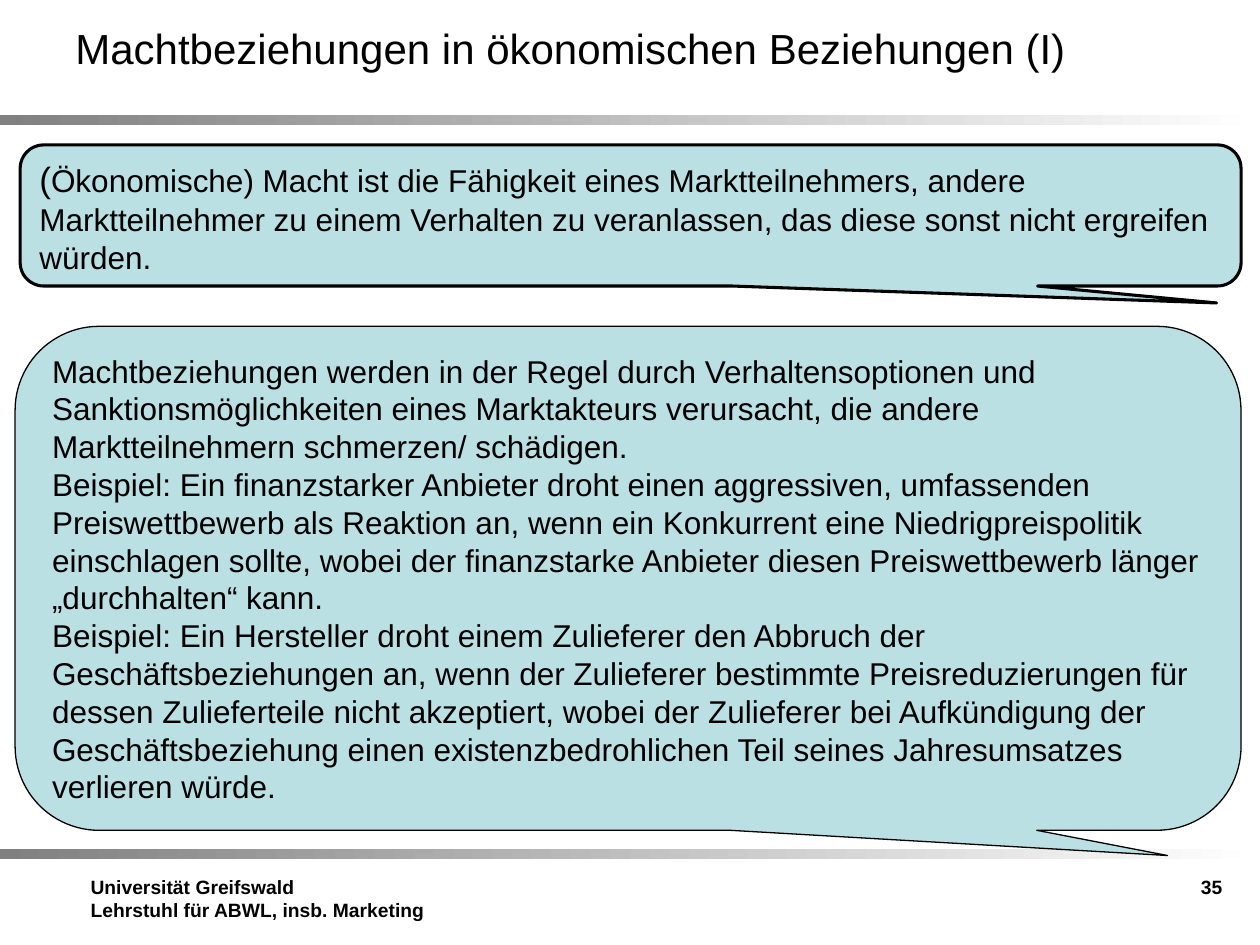
from pptx import Presentation
from pptx import util as u
from pptx.dml.color import RGBColor
from pptx.enum import shapes, text

BLACK = RGBColor(0x00, 0x00, 0x00)
GRAY = RGBColor(0x80, 0x80, 0x80)
WHITE = RGBColor(0xFF, 0xFF, 0xFF)
TEAL = RGBColor(0xBB, 0xE0, 0xE3)

TITLE = "Machtbeziehungen in ökonomischen Beziehungen (I)"
FOOTER = ["Universität Greifswald", "Lehrstuhl für ABWL, insb. Marketing"]
DEFINITION = (
    "Ökonomische) Macht ist die Fähigkeit eines Marktteilnehmers, andere "
    "Marktteilnehmer zu einem Verhalten zu veranlassen, das diese sonst "
    "nicht ergreifen würden."
)
EXAMPLES = [
    "Machtbeziehungen werden in der Regel durch Verhaltensoptionen und "
    "Sanktionsmöglichkeiten eines Marktakteurs verursacht, die andere "
    "Marktteilnehmern schmerzen/ schädigen.",
    "Beispiel: Ein finanzstarker Anbieter droht einen aggressiven, "
    "umfassenden Preiswettbewerb als Reaktion an, wenn ein Konkurrent eine "
    "Niedrigpreispolitik einschlagen sollte, wobei der finanzstarke Anbieter "
    "diesen Preiswettbewerb länger „durchhalten“ kann.",
    "Beispiel: Ein Hersteller droht einem Zulieferer den Abbruch der "
    "Geschäftsbeziehungen an, wenn der Zulieferer bestimmte "
    "Preisreduzierungen für dessen Zulieferteile nicht akzeptiert, wobei der "
    "Zulieferer bei Aufkündigung der Geschäftsbeziehung einen "
    "existenzbedrohlichen Teil seines Jahresumsatzes verlieren würde.",
]


class SlideBuilder:
    font = "Arial"
    color = BLACK

    def __init__(self, slide):
        self.s = slide

    def add_runs(self, sp, paragraphs, bold=False, align=text.PP_ALIGN.LEFT,
                 anchor=text.MSO_ANCHOR.TOP):
        tf = sp.text_frame
        tf.word_wrap = True
        tf.vertical_anchor = anchor
        for i, runs in enumerate(paragraphs):
            p = tf.add_paragraph() if i else tf.paragraphs[0]
            p.alignment = align
            for words, size in runs:
                r = p.add_run()
                r.text = words
                r.font.name = self.font
                r.font.size = u.Pt(size)
                r.font.bold = bold
                r.font.color.rgb = self.color

    def shape(self, kind, box):
        sp = self.s.shapes.add_shape(kind, *map(u.Inches, box))
        sp.shadow.inherit = False
        return sp

    def bar(self, top):
        sp = self.shape(shapes.MSO_SHAPE.RECTANGLE, (0, top, 10, 0.08))
        sp.line.fill.background()
        sp.fill.gradient()
        sp.fill.gradient_angle = 0
        for stop, color, position in zip(sp.fill.gradient_stops, (GRAY, WHITE), (0, 1)):
            stop.color.rgb = color
            stop.position = position

    def text_box(self, box, paragraphs, **style):
        sp = self.s.shapes.add_textbox(*map(u.Inches, box))
        self.add_runs(sp, paragraphs, **style)

    def callout(self, box, tip, line_width, paragraphs, **style):
        sp = self.shape(shapes.MSO_SHAPE.ROUNDED_RECTANGULAR_CALLOUT, box)
        sp.adjustments[0], sp.adjustments[1] = tip
        sp.fill.solid()
        sp.fill.fore_color.rgb = TEAL
        sp.line.color.rgb = BLACK
        sp.line.width = u.Pt(line_width)
        self.add_runs(sp, paragraphs, **style)


def main():
    prs = Presentation()
    prs.slide_width, prs.slide_height = u.Inches(10), u.Inches(7.5)
    b = SlideBuilder(prs.slides.add_slide(prs.slide_layouts[6]))
    for top in (0.91, 6.74):
        b.bar(top)
    b.text_box((0.62, 6.9, 2.91, 0.59), [[(line, 11)] for line in FOOTER], bold=True)
    b.callout((0.16, 1.15, 9.69, 1.12), (0.48, 0.62), 1.75,
              [[("(", 20), (DEFINITION, 18)]])
    b.text_box((7.47, 6.9, 2.33, 0.57), [[("35", 11)]], bold=True,
               align=text.PP_ALIGN.RIGHT)
    b.text_box((0.5, 0.13, 9, 0.63), [[(TITLE, 24)]])
    b.callout((0.12, 2.59, 9.73, 4), (0.44, 0.55), 0.75,
              [[(words, 18)] for words in EXAMPLES],
              anchor=text.MSO_ANCHOR.MIDDLE)
    prs.save("out.pptx")


if __name__ == "__main__":
    main()
